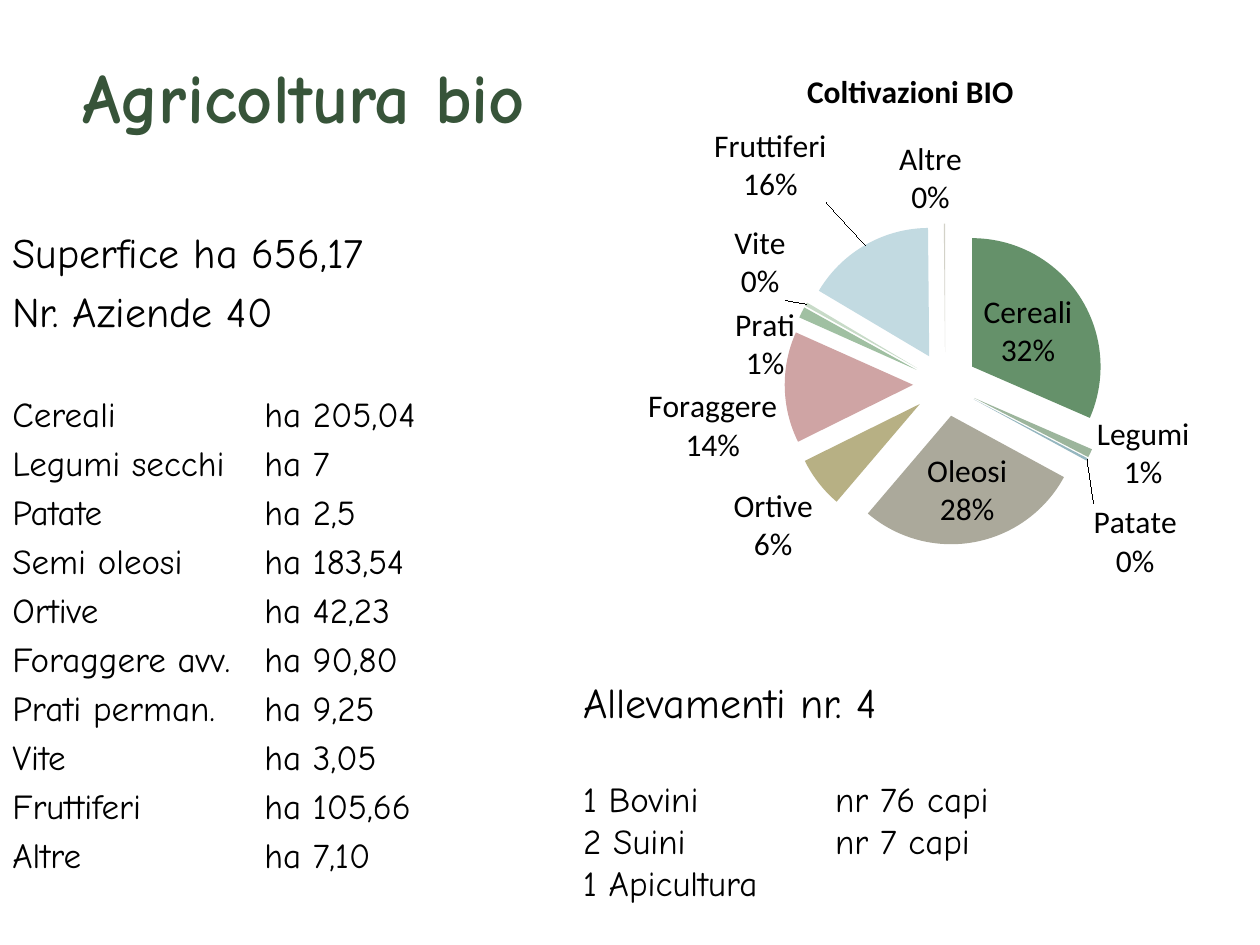
import copy

import pptx
import pptx.chart.data
import pptx.dml.color
import pptx.enum.chart
import pptx.enum.text
import pptx.oxml
import pptx.oxml.ns
import pptx.util

Inches = pptx.util.Inches
Pt = pptx.util.Pt
qn = pptx.oxml.ns.qn

TEXT_FONT = "Comic Neue"
CHART_FONT = "Calibri"
BLACK = "000000"
TITLE_GREEN = "375439"
TAB_STOP = Inches(2)

SURFACE_LINES = ["Superfice ha 656,17", "Nr. Aziende 40"]
CROP_ROWS = [
    "Cereali\tha 205,04", "Legumi secchi\tha 7", "Patate\tha 2,5",
    "Semi oleosi\tha 183,54", "Ortive\tha 42,23", "Foraggere avv.\tha 90,80",
    "Prati perman.\tha 9,25", "Vite\tha 3,05", "Fruttiferi\tha 105,66",
    "Altre\tha 7,10",
]
LIVESTOCK_ROWS = ["1 Bovini\tnr 76 capi", "2 Suini\tnr 7 capi", "1 Apicultura"]

# Category, whole hectares, slice colour
SLICES = [
    ("Cereali", 205, "65916A"), ("Legumi", 7, "9CB59C"),
    ("Patate", 2, "95B6BF"), ("Oleosi", 184, "ABA99B"),
    ("Ortive", 42, "B7B084"), ("Foraggere", 91, "CFA4A4"),
    ("Prati", 9, "A0C0A2"), ("Vite", 3, "C8DBC8"),
    ("Fruttiferi", 106, "C2DAE1"), ("Altre", 1, "D3D2C8"),
]
# Label shifts as shares of the chart's width and height
LABEL_SHIFTS = {"Vite": (-0.02, 0), "Fruttiferi": (-0.05, -0.06),
                "Altre": (-0.02, 0)}


def rgb(value):
    return pptx.dml.color.RGBColor.from_string(value)


def style_font(font, name, size, color=BLACK, bold=False):
    font.name = name
    font.size = Pt(size)
    font.bold = bold
    font.color.rgb = rgb(color)


def chart_xml(text):
    """Parse one chart element written without its namespace."""
    ns = pptx.oxml.ns.nsdecls("c")
    return pptx.oxml.parse_xml(text.replace(">", f" {ns}>", 1))


def manual_layout(modes="", **box):
    parts = "".join(f'<c:{key} val="{val}"/>' for key, val in box.items())
    return chart_xml(f"<c:layout><c:manualLayout>{modes}{parts}"
                     "</c:manualLayout></c:layout>")


def add_title(slide, text):
    sp = slide.shapes.title
    sp.left, sp.top = Inches(0.12), Inches(0.29)
    sp.width, sp.height = Inches(4.58), Inches(0.93)
    tf = sp.text_frame
    tf.vertical_anchor = pptx.enum.text.MSO_ANCHOR.MIDDLE
    p = tf.paragraphs[0]
    p.alignment = pptx.enum.text.PP_ALIGN.CENTER
    r = p.add_run()
    r.text = text
    style_font(r.font, TEXT_FONT, 40, TITLE_GREEN, bold=True)


def add_tab_stop(p):
    tabs = pptx.oxml.parse_xml(
        f'<a:tabLst {pptx.oxml.ns.nsdecls("a")}>'
        f'<a:tab pos="{TAB_STOP}" algn="l"/></a:tabLst>')
    p._p.get_or_add_pPr().append(tabs)


def add_list(slide, left, top, width, height, headings, rows, gap, spacing=0):
    """Headings at 24 pt, then a gap in points, then tabbed rows at 20 pt.

    spacing is the space before each paragraph, as a share of its size.
    """
    sp = slide.shapes.add_textbox(
        Inches(left), Inches(top), Inches(width), Inches(height))
    tf = sp.text_frame
    tf.word_wrap = True
    lines = [(t, 24) for t in headings] + [(t, 20) for t in rows]
    for i, (text, size) in enumerate(lines):
        p = tf.paragraphs[0] if i == 0 else tf.add_paragraph()
        extra = gap if i == len(headings) else 0
        p.space_before = Pt(size * spacing + extra)
        add_tab_stop(p)
        r = p.add_run()
        r.text = text
        style_font(r.font, TEXT_FONT, size)


def add_crop_pie(slide):
    data = pptx.chart.data.CategoryChartData()
    data.categories = [name for name, _, _ in SLICES]
    data.add_series("Coltivazioni BIO", [area for _, area, _ in SLICES])
    chart = slide.shapes.add_chart(
        pptx.enum.chart.XL_CHART_TYPE.PIE, Inches(4.45), Inches(0.36),
        Inches(5.55), Inches(4.72), data).chart
    style_font(chart.font, CHART_FONT, 18)
    chart.has_legend = False
    chart.has_title = True
    r = chart.chart_title.text_frame.paragraphs[0].add_run()
    r.text = "Coltivazioni BIO"
    style_font(r.font, CHART_FONT, 18, bold=True)

    plot = chart.plots[0]
    plot.vary_by_categories = True
    series = plot.series[0]
    for i, (_, _, color) in enumerate(SLICES):
        fill = series.points[i].format.fill
        fill.solid()
        fill.fore_color.rgb = rgb(color)
    explode_slices(series, 25)
    add_slice_labels(series)
    place_pie(chart, x=0.32, y=0.3, w=0.46, h=0.54)


def explode_slices(series, percent):
    points = series._element.findall(qn("c:dPt"))
    for follower in [points[0]] + [pt.find(qn("c:spPr")) for pt in points]:
        follower.addprevious(
            chart_xml(f'<c:explosion val="{percent}"></c:explosion>'))


def add_slice_labels(series):
    labels = series.data_labels
    labels.show_category_name = True
    labels.show_percentage = True
    labels.show_value = False
    labels.number_format = "0%"
    labels.number_format_is_linked = False
    labels.position = pptx.enum.chart.XL_LABEL_POSITION.BEST_FIT
    style_font(labels.font, CHART_FONT, 18)
    element = labels._element
    for tag in ("c:separator", "c:showLeaderLines"):
        for old in element.findall(qn(tag)):
            element.remove(old)
    element.append(chart_xml("<c:separator>\n</c:separator>"))
    shift_labels(element)
    element.append(chart_xml('<c:showLeaderLines val="1"></c:showLeaderLines>'))


def shift_labels(element):
    """Give each shifted label the shared settings and its own offset."""
    shared = list(element)
    for i, (name, _, _) in enumerate(SLICES):
        if name in LABEL_SHIFTS:
            dx, dy = LABEL_SHIFTS[name]
            label = chart_xml(f'<c:dLbl><c:idx val="{i}"/></c:dLbl>')
            label.append(manual_layout(x=dx, y=dy))
            label.extend(copy.deepcopy(shared))
            shared[0].addprevious(label)


def place_pie(chart, **box):
    """Fix the plot area; box holds x, y, w, h as shares of the chart."""
    area = chart._chartSpace.chart.plotArea
    for old in area.findall(qn("c:layout")):
        area.remove(old)
    modes = ('<c:layoutTarget val="inner"/>'
             '<c:xMode val="edge"/><c:yMode val="edge"/>')
    area.insert(0, manual_layout(modes, **box))


def main():
    prs = pptx.Presentation()
    prs.slide_width, prs.slide_height = Inches(10), Inches(7.5)
    slide = prs.slides.add_slide(prs.slide_layouts[5])
    add_title(slide, "Agricoltura bio")
    add_list(slide, 0, 1.75, 4.06, 4.95, SURFACE_LINES, CROP_ROWS,
             gap=28.5, spacing=0.2)
    add_crop_pie(slide)
    add_list(slide, 4.53, 5.32, 3.53, 1.92, ["Allevamenti nr. 4"],
             LIVESTOCK_ROWS, gap=29)
    prs.save("out.pptx")


if __name__ == "__main__":
    main()
